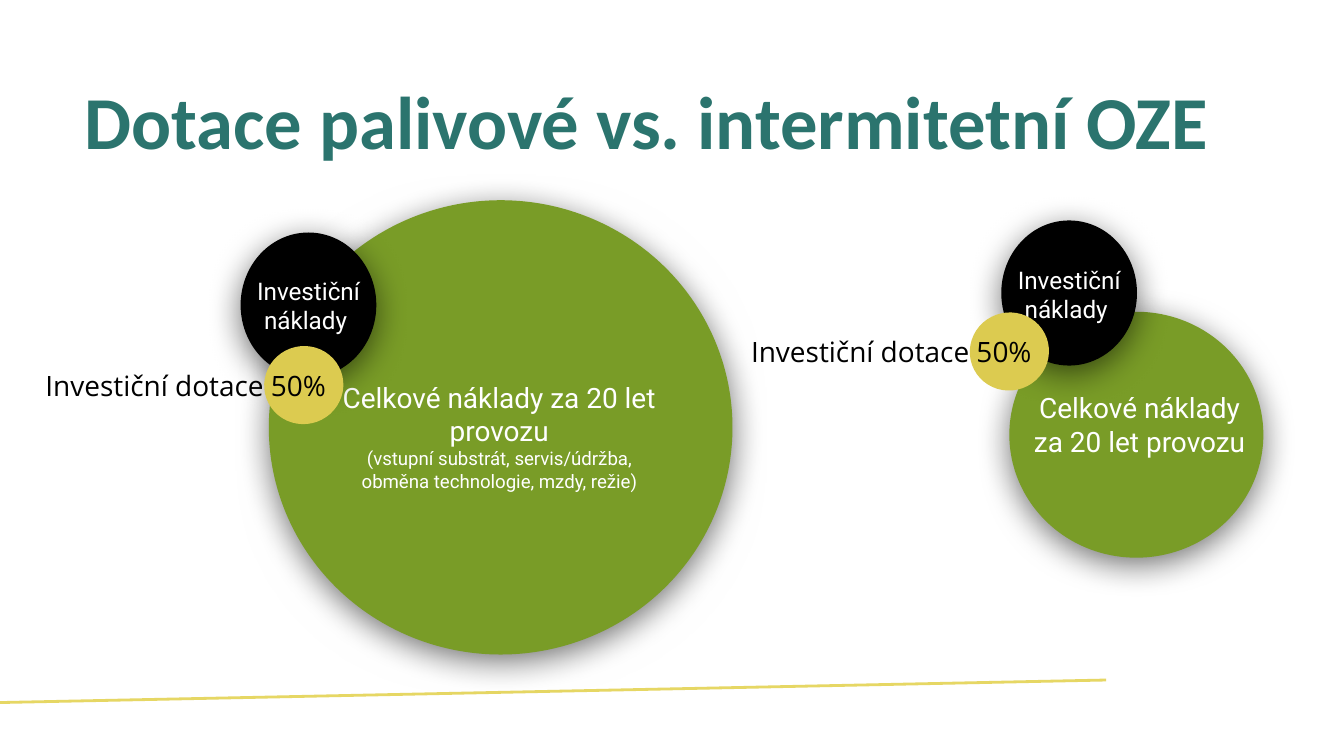
from dataclasses import dataclass

from lxml import etree
from pptx import Presentation
from pptx import util as u
from pptx.dml.color import RGBColor
from pptx.enum import shapes, text
from pptx.oxml import ns, parse_xml

CELL = u.Inches(0.1)
COLUMNS, ROWS = 100, 56.25


@dataclass(frozen=True)
class Theme:
    heading: str = "2B746E"
    total: str = "799C27"
    investment: str = "000000"
    subsidy: str = "DCCB50"
    rule: str = "E6D764"
    light: str = "FFFFFF"
    dark: str = "000000"
    heading_font: str = "Calibri"
    circle_font: str = "Roboto"
    label_font: str = "Open Sans"
    heading_size: float = 40
    body_size: float = 15
    investment_size: float = 13
    detail_size: float = 10


@dataclass(frozen=True)
class Area:
    column: float
    row: float
    columns: float
    rows: float

    def lengths(self) -> list[int]:
        return [grid(n) for n in (self.column, self.row, self.columns, self.rows)]


@dataclass(frozen=True)
class Source:
    total: Area
    total_label: Area
    investment: Area
    investment_label: Area
    subsidy: Area
    detail: str = ""


THEME = Theme()
SOURCES = (
    Source(
        Area(20, 14.9, 34.5, 33.8), Area(24, 24.4, 26.3, 16.1),
        Area(17.9, 17.3, 10.1, 10.8), Area(17.9, 19.1, 10.1, 7.2),
        Area(19.7, 25.7, 5.8, 5.9),
        "(vstupní substrát, servis/údržba, obměna technologie, mzdy, režie)",
    ),
    Source(
        Area(75.1, 23.2, 18.9, 18.3), Area(75.1, 23.5, 19.4, 16.1),
        Area(74.5, 16.4, 10.1, 10.8), Area(74.5, 18.3, 10.1, 7.2),
        Area(72.2, 23.2, 5.8, 5.9),
    ),
)


def grid(cells: float) -> int:
    return round(cells * CELL)


def write(frame, *lines: tuple[str, float], font: str, color: str, bold: bool = False,
          align=text.PP_ALIGN.LEFT, anchor=text.MSO_ANCHOR.TOP) -> None:
    frame.word_wrap = True
    frame.auto_size = text.MSO_AUTO_SIZE.NONE
    frame.vertical_anchor = anchor
    frame.margin_left = frame.margin_right = CELL
    frame.margin_top = frame.margin_bottom = CELL
    for index, (words, size) in enumerate(lines):
        paragraph = frame.add_paragraph() if index else frame.paragraphs[0]
        paragraph.alignment = align
        run = paragraph.add_run()
        run.text = words
        run.font.name = font
        run.font.size = u.Pt(size)
        run.font.bold = bold
        run.font.color.rgb = RGBColor.from_string(color)


def add_circle(parent, area: Area, color: str, rotation: float = 0):
    circle = parent.add_shape(shapes.MSO_SHAPE.OVAL, *area.lengths())
    circle.shadow.inherit = False
    circle.fill.solid()
    circle.fill.fore_color.rgb = RGBColor.from_string(color)
    circle.line.fill.background()
    circle.rotation = rotation
    return circle


def cast_shadow(circle) -> None:
    effects = circle.element.spPr.find(ns.qn("a:effectLst"))
    effects.append(parse_xml(
        f'<a:outerShdw {ns.nsdecls("a")} blurRad="{u.Pt(18)}" dist="{u.Pt(4)}" '
        'dir="5400000" algn="ctr" rotWithShape="0"><a:srgbClr val="000000">'
        '<a:alpha val="55000"/></a:srgbClr></a:outerShdw>'))


def add_labelled_circle(slide, area: Area, label: Area, color: str,
                        *lines: tuple[str, float]) -> None:
    group = slide.shapes.add_group_shape().shapes
    cast_shadow(add_circle(group, area, color))
    write(group.add_textbox(*label.lengths()).text_frame, *lines,
          font=THEME.circle_font, color=THEME.light,
          align=text.PP_ALIGN.CENTER, anchor=text.MSO_ANCHOR.MIDDLE)


def add_subsidy(slide, area: Area) -> None:
    add_circle(slide.shapes, area, THEME.subsidy, rotation=250.1)
    label = Area(area.column - 17.3, area.row + 0.7, 23, 3.8)
    write(slide.shapes.add_textbox(*label.lengths()).text_frame,
          ("Investiční dotace 50%", THEME.body_size),
          font=THEME.label_font, color=THEME.dark)


def add_source(slide, source: Source) -> None:
    total = [("Celkové náklady za 20 let provozu", THEME.body_size)]
    if source.detail:
        total.append((source.detail, THEME.detail_size))
    add_labelled_circle(slide, source.total, source.total_label, THEME.total, *total)
    add_labelled_circle(slide, source.investment, source.investment_label,
                        THEME.investment, ("Investiční náklady ", THEME.investment_size))
    add_subsidy(slide, source.subsidy)


def add_rule(slide) -> None:
    rule = slide.shapes.add_connector(
        shapes.MSO_CONNECTOR.STRAIGHT, *(grid(n) for n in (-1.2, 52.3, 82.3, 50.6)))
    rule.line.color.rgb = RGBColor.from_string(THEME.rule)
    rule.line.width = u.Pt(1.5)
    etree.SubElement(rule.element.spPr, ns.qn("a:effectLst"))


def add_heading(slide) -> None:
    heading = slide.shapes.title
    heading.left, heading.top, heading.width, heading.height = Area(
        5.3, 4.6, 88.5, 12.7).lengths()
    write(heading.text_frame, ("Dotace palivové vs. intermitetní OZE", THEME.heading_size),
          font=THEME.heading_font, color=THEME.heading, bold=True)


def main() -> None:
    deck = Presentation()
    deck.slide_width, deck.slide_height = grid(COLUMNS), grid(ROWS)
    slide = deck.slides.add_slide(deck.slide_layouts.get_by_name("Title Only"))
    add_rule(slide)
    add_heading(slide)
    for source in SOURCES:
        add_source(slide, source)
    deck.save("out.pptx")


if __name__ == "__main__":
    main()
